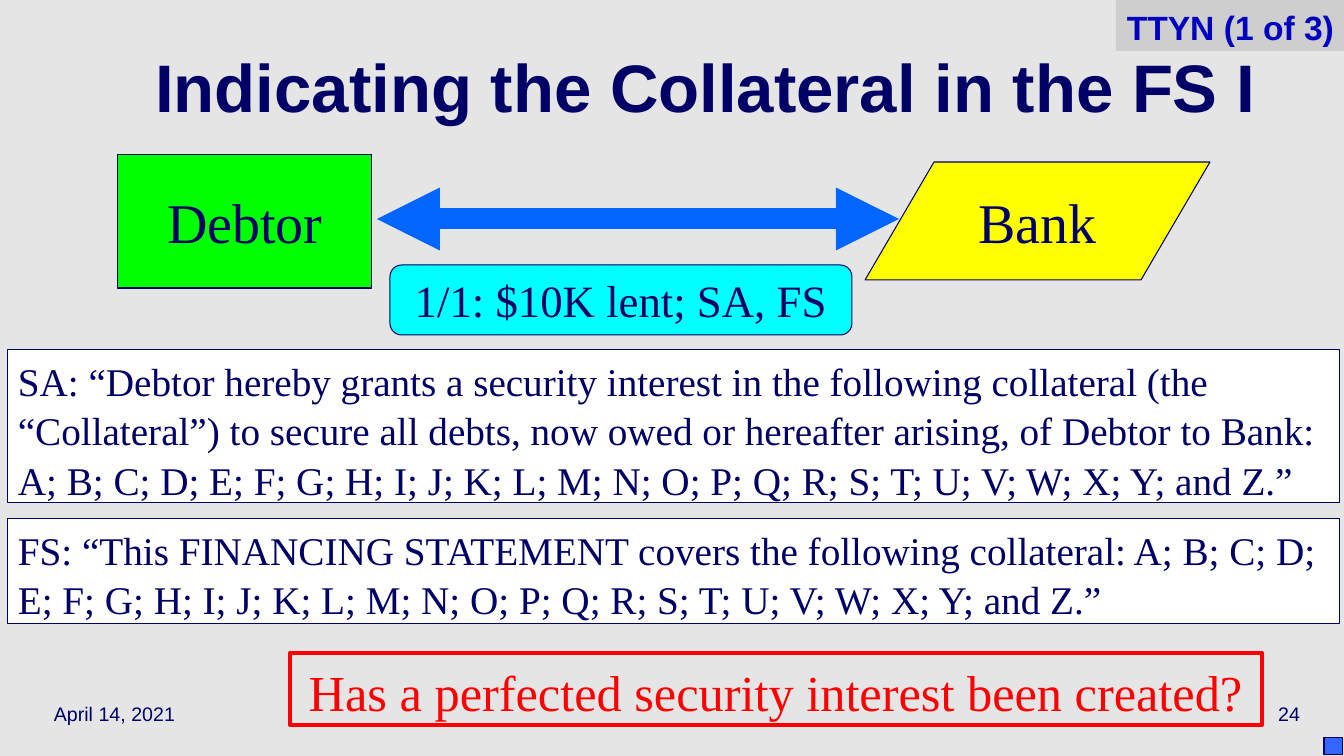
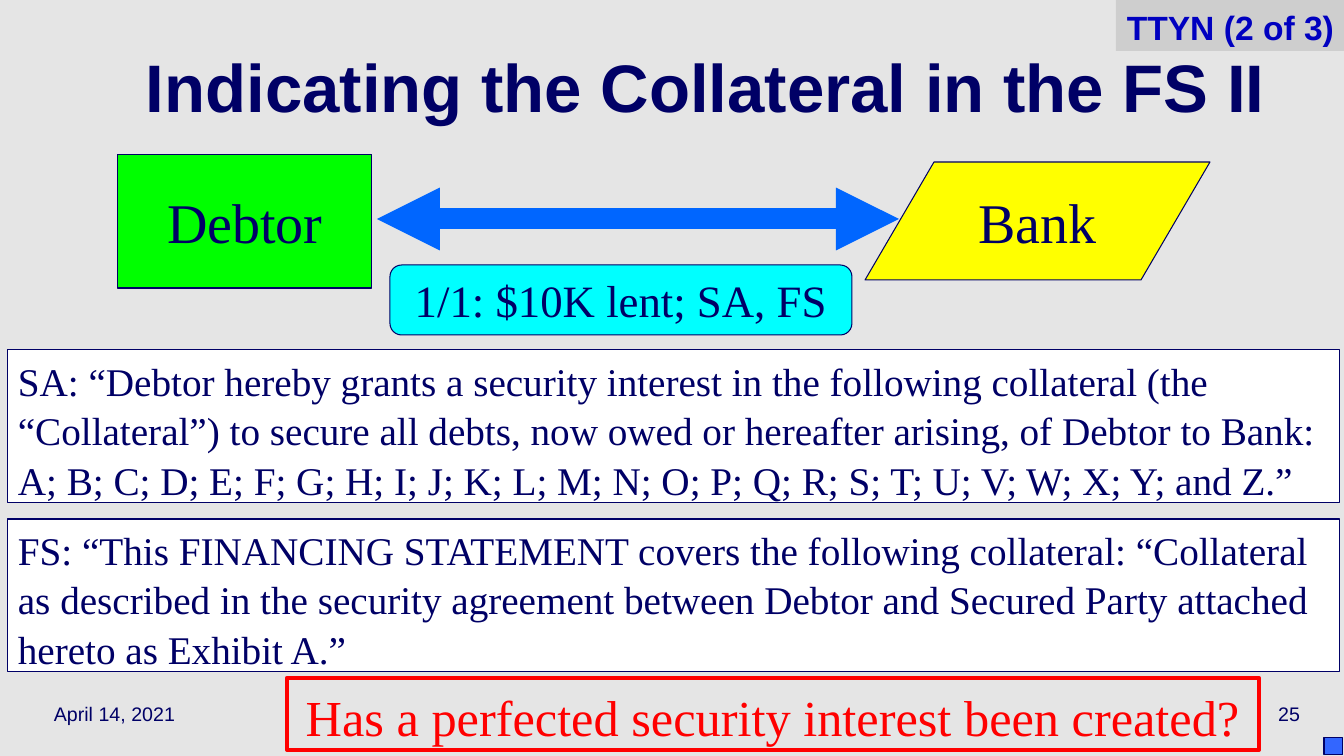
"""Build two slides on indicating the collateral in a financing statement."""
import pptx
import pptx.util
import pptx.dml.color
import pptx.enum.dml
import pptx.enum.shapes
import pptx.enum.text
import pptx.oxml
import pptx.oxml.ns

PX = 914400 / 100.8
WIDTH, HEIGHT = 1344, 756
SANS, SERIF = "Arial", "Times New Roman"
NAVY, TAG_BLUE, ARROW_BLUE, CORNER_BLUE = "000066", "0000C0", "0066FF", "3366FF"
GREEN, YELLOW, CYAN, RED, WHITE = "00FF00", "FFFF00", "00FFFF", "FF0000", "FFFFFF"
BACKGROUND, TAG_GREY = "E5E5E5", "CECECE"

SHAPES = pptx.enum.shapes.MSO_SHAPE
ALIGN = pptx.enum.text.PP_ALIGN
ANCHOR = pptx.enum.text.MSO_ANCHOR

DATE = "April 14, 2021"
QUESTION = "Has a perfected security interest been created?"
LOAN = "1/1: $10K lent; SA, FS"
LETTERS = "A; B; C; D; E; F; G; H; I; J; K; L; M; N; O; P; Q; R; S; T; U; V; W; X; Y; and Z.”"
AGREEMENT = (
    "SA: “Debtor hereby grants a security interest in the following collateral "
    "(the “Collateral”) to secure all debts, now owed or hereafter arising, "
    "of Debtor to Bank: " + LETTERS
)
STATEMENT = "FS: “This FINANCING STATEMENT covers the following collateral: "

SLIDES = [
    {
        "number": "24",
        "title": "Indicating the Collateral in the FS I",
        "tag": "TTYN (1 of 3)",
        "statement": STATEMENT + LETTERS,
        "statement_height": 105,
        "question_at": (290, 653),
    },
    {
        "number": "25",
        "title": "Indicating the Collateral in the FS II",
        "tag": "TTYN (2 of 3)",
        "statement": STATEMENT + "“Collateral as described in the security agreement "
        "between Debtor and Secured Party attached hereto as Exhibit A.”",
        "statement_height": 153,
        "question_at": (287, 678),
    },
]

PARTIES = [
    ("Bank", SHAPES.FLOWCHART_DATA, (865, 162, 345, 118), YELLOW, 40),
    (LOAN, SHAPES.FLOWCHART_ALTERNATE_PROCESS, (390, 265, 462, 70), CYAN, 32),
    ("Debtor", SHAPES.RECTANGLE, (118, 154, 254, 134), GREEN, 40),
]
ARROW = (377, 899, 219)


def px(length):
    return pptx.util.Emu(round(length * PX))


def color(value):
    return pptx.dml.color.RGBColor.from_string(value)


def write(shape, text, size, font=SERIF, ink=NAVY, bold=False, align=ALIGN.LEFT,
          anchor=ANCHOR.MIDDLE, spacing=1.0, wrap=True):
    frame = shape.text_frame
    frame.text = text
    frame.word_wrap = wrap
    frame.vertical_anchor = anchor
    paragraph = frame.paragraphs[0]
    paragraph.alignment = align
    paragraph.line_spacing = spacing
    style = paragraph.runs[0].font
    style.name, style.size, style.bold = font, pptx.util.Pt(size), bold
    style.color.rgb = color(ink)


def add_text(slide, box, text, size, **style):
    write(slide.shapes.add_textbox(*map(px, box)), text, size, font=SANS, **style)


def add_box(slide, kind, box, fill=None, line=NAVY, weight=0.75):
    shape = slide.shapes.add_shape(kind, *map(px, box))
    shape.shadow.inherit = False
    if fill:
        shape.fill.solid()
        shape.fill.fore_color.rgb = color(fill)
    else:
        shape.fill.background()
    if line:
        shape.line.color.rgb = color(line)
        shape.line.width = pptx.util.Pt(weight)
    else:
        shape.line.fill.background()
    return shape


def add_double_arrow(slide, left, right, y):
    connector = slide.shapes.add_connector(
        pptx.enum.shapes.MSO_CONNECTOR.STRAIGHT, px(left), px(y), px(right), px(y))
    connector.line.color.rgb = color(ARROW_BLUE)
    connector.line.width = pptx.util.Pt(15)
    outline = connector.line._get_or_add_ln()
    for end in ("headEnd", "tailEnd"):
        outline.append(pptx.oxml.parse_xml(
            f'<a:{end} {pptx.oxml.ns.nsdecls("a")} type="triangle"/>'))
    connector._element.spPr.append(pptx.oxml.parse_xml(
        f'<a:effectLst {pptx.oxml.ns.nsdecls("a")}/>'))


def add_frame(slide, content):
    slide.background.fill.solid()
    slide.background.fill.fore_color.rgb = color(BACKGROUND)
    add_text(slide, (44, 689, 280, 50), DATE, 14)
    add_text(slide, (1030, 689, 280, 50), content["number"], 14, align=ALIGN.RIGHT)
    add_text(slide, (90, 33, 1232, 126), content["title"], 48, bold=True,
             align=ALIGN.CENTER, spacing=0.7)


def add_corner(slide, tag):
    add_box(slide, SHAPES.RECTANGLE, (1324, 738, 19, 17), CORNER_BLUE)
    shape = add_box(slide, SHAPES.RECTANGLE, (1116, 0, 228, 51), TAG_GREY, line=None)
    write(shape, tag, 24, font=SANS, ink=TAG_BLUE, bold=True, align=ALIGN.RIGHT,
          anchor=ANCHOR.TOP, spacing=1.05, wrap=False)


def add_slide(presentation, content):
    slide = presentation.slides.add_slide(presentation.slide_layouts[6])
    add_frame(slide, content)
    add_double_arrow(slide, *ARROW)
    for text, kind, box, fill, size in PARTIES:
        write(add_box(slide, kind, box, fill), text, size, align=ALIGN.CENTER, wrap=False)
    question = add_box(slide, SHAPES.RECTANGLE, (*content["question_at"], 972, 72),
                       line=RED, weight=3)
    write(question, QUESTION, 36, ink=RED, align=ALIGN.CENTER,
          anchor=ANCHOR.TOP, spacing=1.05)
    for text, top, height in ((AGREEMENT, 350, 153),
                              (content["statement"], 519, content["statement_height"])):
        clause = add_box(slide, SHAPES.RECTANGLE, (8, top, 1332, height), WHITE)
        write(clause, text, 28, anchor=ANCHOR.TOP, spacing=1.05)
    add_corner(slide, content["tag"])


def main():
    presentation = pptx.Presentation()
    presentation.slide_width, presentation.slide_height = px(WIDTH), px(HEIGHT)
    for content in SLIDES:
        add_slide(presentation, content)
    presentation.save("out.pptx")


if __name__ == "__main__":
    main()
